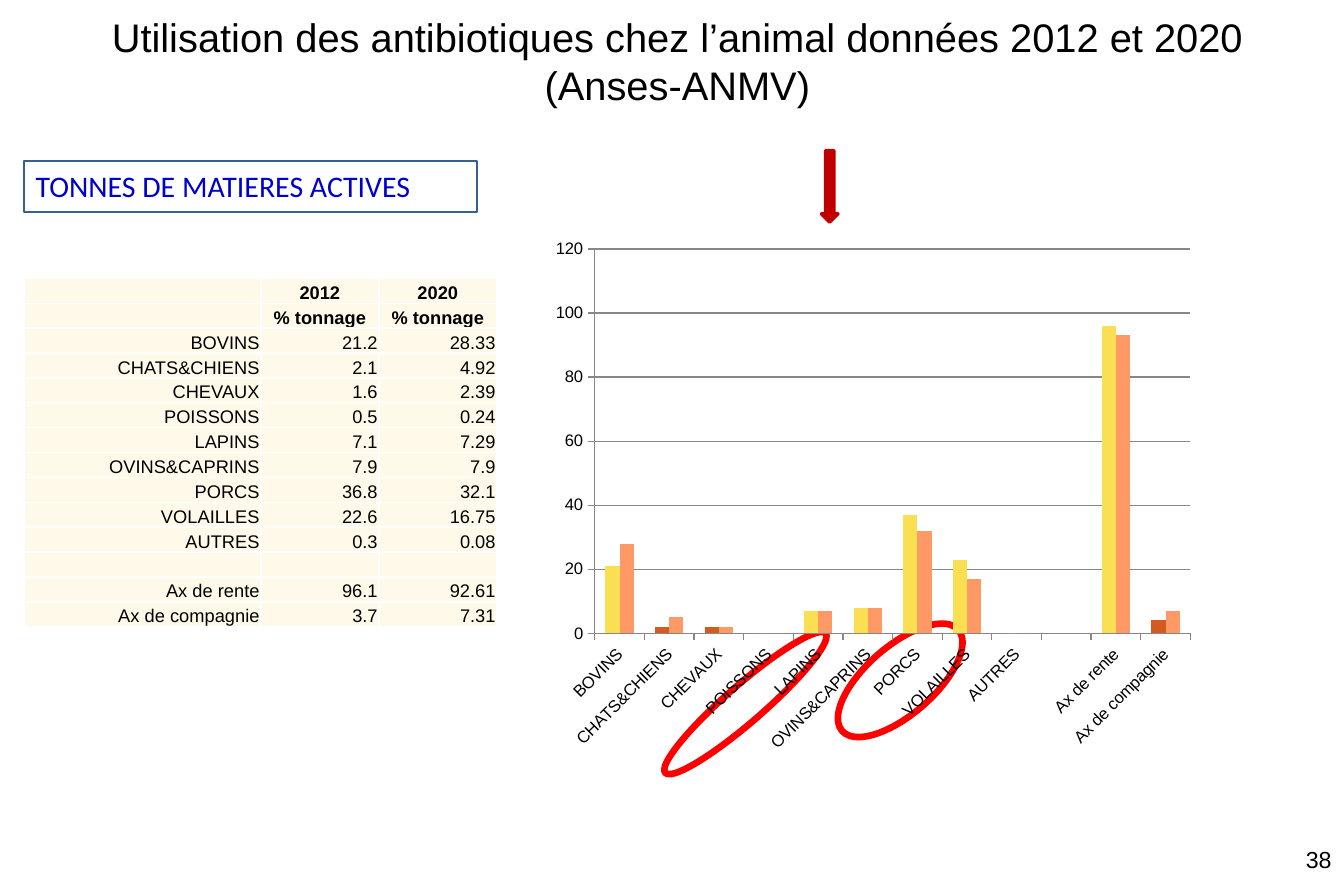
from lxml.etree import SubElement
from pptx import Presentation
from pptx.chart.data import CategoryChartData as ChartData
from pptx.dml.color import RGBColor
from pptx.enum.chart import XL_CHART_TYPE as Kind, XL_TICK_MARK as Tick
from pptx.enum.shapes import MSO_SHAPE as Form
from pptx.enum.text import MSO_ANCHOR as Anchor, PP_ALIGN as Align
from pptx.oxml import parse_xml
from pptx.oxml.ns import nsdecls, qn
from pptx.util import Inches, Pt

rgb = RGBColor.from_string
CELL = 0.05  # the slide is a grid of 225 columns by 150 rows
RED, DARK, GREY = "FF0000", "C00000", "878787"


def box(*cells):
    return [Inches(n * CELL) for n in cells]


def write(frame, text, size, align, color="000000", face="Arial", bold=False):
    frame.word_wrap = True
    para = frame.paragraphs[0]
    para.text = text
    para.alignment = align
    for run in para.runs:
        font = run.font
        font.size, font.name, font.bold = Pt(size), face, bold
        font.color.rgb = rgb(color)
    return para


deck = Presentation()
deck.slide_width, deck.slide_height = box(225, 150)
slide = deck.slides.add_slide(deck.slide_layouts[6])
shapes = slide.shapes

# Title and page number
title = shapes.add_textbox(*box(13.4, 0.9, 200, 18.4)).text_frame
title.vertical_anchor = Anchor.MIDDLE
write(title, "Utilisation des antibiotiques chez l’animal données 2012 et 2020 (Anses-ANMV)",
      24, Align.CENTER)
page = shapes.add_textbox(*box(178.1, 140.6, 46.8, 10)).text_frame
write(page, "38", 14, Align.RIGHT)

# Shares of tonnage by species
data = [
    ("BOVINS", 21.2, 28.33),
    ("CHATS&CHIENS", 2.1, 4.92),
    ("CHEVAUX", 1.6, 2.39),
    ("POISSONS", 0.5, 0.24),
    ("LAPINS", 7.1, 7.29),
    ("OVINS&CAPRINS", 7.9, 7.9),
    ("PORCS", 36.8, 32.1),
    ("VOLAILLES", 22.6, 16.75),
    ("AUTRES", 0.3, 0.08),
    ("", None, None),
    ("Ax de rente", 96.1, 92.61),
    ("Ax de compagnie", 3.7, 7.31),
]
heads = [("", "2012", "2020"), ("", "% tonnage", "% tonnage")]
rows = heads + data

# Table, with no rule between its narrow first column and the names
table = shapes.add_table(len(rows), 4, *box(4, 46.6, 79, 58.4)).table
table.first_row = table.horz_banding = False
for col, wide in zip(table.columns, box(1, 38.5, 19.75, 19.75)):
    col.width = wide
for r, row in enumerate(rows):
    table.rows[r].height = Inches(2.92 / len(rows))
    head = r < len(heads)
    for c, value in enumerate(("", *row)):
        cell = table.cell(r, c)
        cell.fill.solid()
        cell.fill.fore_color.rgb = rgb("FEF9E9")
        cell.margin_left = cell.margin_right = cell.margin_top = Inches(0.01)
        cell.margin_bottom = 0
        cell.vertical_anchor = Anchor.BOTTOM
        text = "" if value is None else str(value)
        para = write(cell.text_frame, text, 11,
                     Align.CENTER if head else Align.RIGHT, bold=head)
        if not text:
            SubElement(para._p, qn("a:endParaRPr"), sz="1100")
        props = cell._tc.get_or_add_tcPr()
        for n, side in enumerate(("lnL", "lnR", "lnT", "lnB")):
            rule = '<a:solidFill><a:srgbClr val="FFFFFF"/></a:solidFill>'
            if (c, side) in ((0, "lnR"), (1, "lnL")):
                rule = "<a:noFill/>"
            props.insert(n, parse_xml(
                f'<a:{side} {nsdecls("a")} w="12700">{rule}</a:{side}>'))

# Rings, caption frame and arrow: form, place, turn, fill, line, weight
marks = [
    (Form.OVAL, (137.8, 108.2, 25.8, 11.4), 319, None, RED, 4),
    (Form.RECTANGLE, (4, 27, 75.9, 8.5), 0, None, "376092", 1),
    (Form.OVAL, (107, 114.6, 35.6, 6.2), 319, None, RED, 4),
    (Form.DOWN_ARROW, (137.5, 25.2, 2.8, 12), 0, DARK, DARK, 2),
]
for form, place, turn, fill, line, weight in marks:
    mark = shapes.add_shape(form, *box(*place))
    mark.shadow.inherit = False
    mark.rotation = turn
    mark.line.color.rgb = rgb(line)
    mark.line.width = Pt(weight)
    if fill:
        mark.fill.solid()
        mark.fill.fore_color.rgb = rgb(fill)
    else:
        mark.fill.background()
    if form == Form.RECTANGLE:
        mark.text_frame.vertical_anchor = Anchor.TOP
        mark.text_frame.margin_top = Inches(0.03)
        label = write(mark.text_frame, "TONNES DE MATIERES ACTIVES", 18,
                      Align.LEFT, "0000CC", "Calibri")
        label.line_spacing = 1.07

# Column chart, in whole percents
source = ChartData()
source.categories = [row[0] for row in data]
for n, year in enumerate(heads[0][1:], 1):
    source.add_series(year, [None if row[n] is None else round(row[n]) for row in data])
chart = shapes.add_chart(Kind.COLUMN_CLUSTERED, *box(90.7, 38.1, 110.8, 89.4), source).chart
chart.has_legend = chart.has_title = False
chart.font.size, chart.font.name = Pt(10), "Arial"
chart.font.color.rgb = rgb("000000")
plot = chart.plots[0]
plot.gap_width, plot.overlap, plot.vary_by_categories = 150, 0, False
for series, color in zip(plot.series, ("FBDF53", "FF9966")):
    series.invert_if_negative = False
    series.format.fill.solid()
    series.format.fill.fore_color.rgb = rgb(color)
for n in (1, 2, 11):
    point = plot.series[0].points[n].format.fill
    point.solid()
    point.fore_color.rgb = rgb("D35B1F")

# Axes
cats, vals = chart.category_axis, chart.value_axis
vals.minimum_scale, vals.maximum_scale, vals.major_unit = 0, 120, 20
vals.has_major_gridlines = True
for axis in (cats, vals):
    axis.major_tick_mark, axis.minor_tick_mark = Tick.OUTSIDE, Tick.NONE
    axis.tick_labels.font.size = Pt(10)
for part in (cats, vals, vals.major_gridlines):
    part.format.line.color.rgb = rgb(GREY)
    part.format.line.width = Pt(0.75)
cats._element.find(qn("c:txPr")).find(qn("a:bodyPr")).set("rot", "-2700000")

# Clear backdrop and fixed plot area
root = chart._chartSpace
area = root.chart.plotArea
clear = f'<c:spPr {nsdecls("c", "a")}><a:noFill/><a:ln><a:noFill/></a:ln></c:spPr>'
root.chart.addnext(parse_xml(clear))
area.append(parse_xml(clear))
for old in area.findall(qn("c:layout")):
    area.remove(old)
layout = parse_xml(f'<c:layout {nsdecls("c")}><c:manualLayout/></c:layout>')
area.insert(0, layout)
for tag, val in (("layoutTarget", "inner"), ("xMode", "edge"), ("yMode", "edge"),
                 ("x", "0.08"), ("y", "0.04"), ("w", "0.9"), ("h", "0.72")):
    SubElement(layout[0], qn(f"c:{tag}"), val=val)

deck.save("out.pptx")
